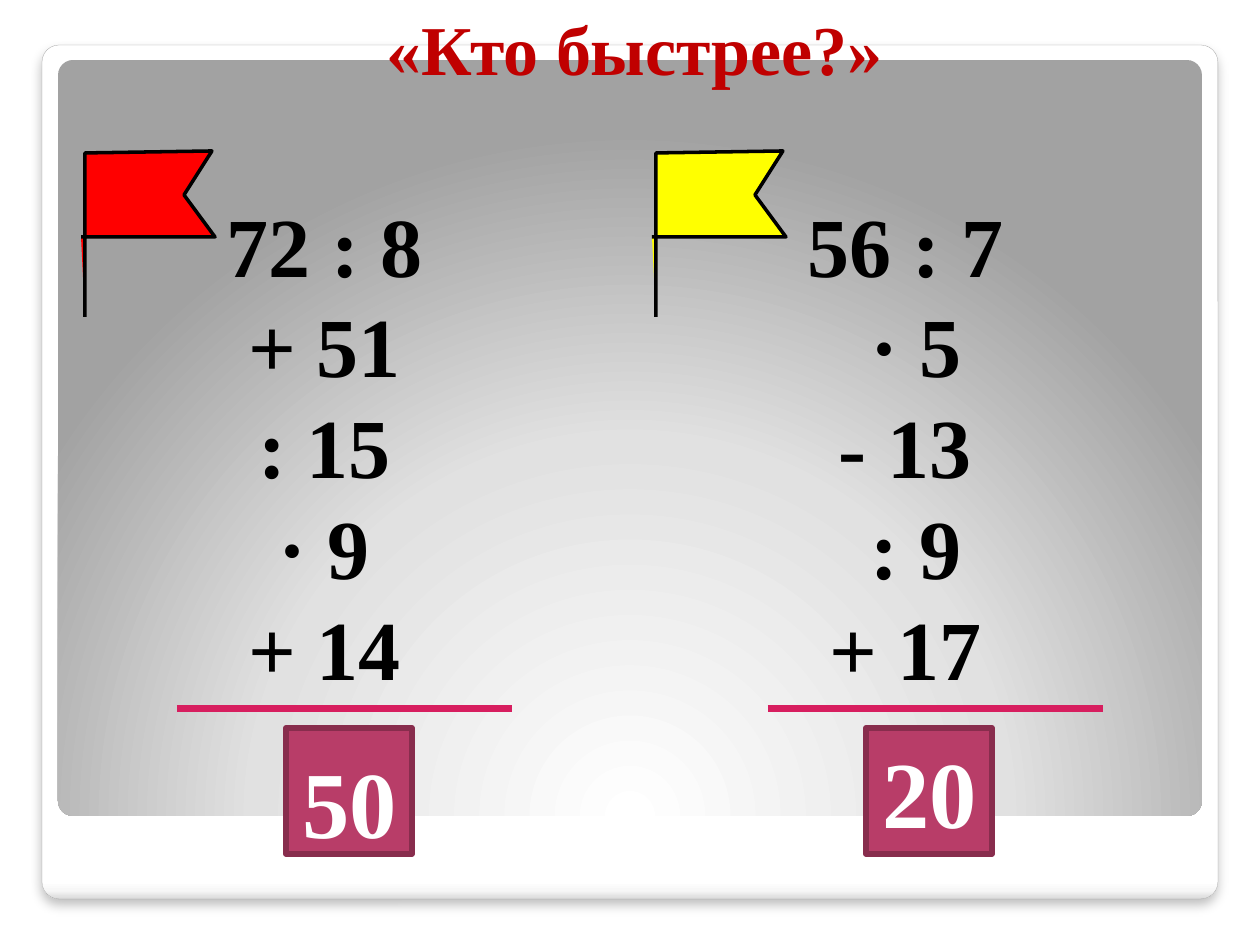
"""Builds the mental arithmetic race slide with two columns of sums."""
from pptx import Presentation
from pptx.dml.color import RGBColor
from pptx.enum.shapes import MSO_CONNECTOR as Connector, MSO_SHAPE as Shape
from pptx.enum.text import MSO_ANCHOR as Anchor, MSO_AUTO_SIZE as AutoSize, PP_ALIGN as Align
from pptx.oxml import parse_xml
from pptx.oxml.ns import nsdecls, qn
from pptx.util import Emu, Pt

PX = 914400 // 126
SLIDE_SIZE = (1260, 945)
BLACK = RGBColor(0x00, 0x00, 0x00)
WHITE = RGBColor(0xFF, 0xFF, 0xFF)
RED = RGBColor(0xFF, 0x00, 0x00)
YELLOW = RGBColor(0xFF, 0xFF, 0x00)
DARK_RED = RGBColor(0xC0, 0x00, 0x00)
PINK = RGBColor(0xD7, 0x1E, 0x5F)
PLUM = RGBColor(0xB8, 0x3D, 0x68)
DARK_PLUM = RGBColor(0x88, 0x2D, 0x4D)
GREY = RGBColor(0xA4, 0xA4, 0xA4)

TITLE = "«Кто быстрее?»"
COLUMNS = [
    {"steps": ["72 : 8", "+ 51", ": 15", "· 9", "+ 14"], "answer": "50", "flag": RED,
     "flag_x": 81, "steps_x": 118, "rule_x": 177, "answer_x": 286, "answer_y": 738},
    {"steps": ["56 : 7", " · 5", "- 13", " : 9", "+ 17"], "answer": "20", "flag": YELLOW,
     "flag_x": 652, "steps_x": 699, "rule_x": 768, "answer_x": 866, "answer_y": 728},
]
FLAG_TOP = 151
FLAG_POINTS = [(0, 86), (21, 86), (134, 86), (103, 44), (131, 0), (4, 2), (4, 166)]
RULE_Y, RULE_WIDTH = 709, 335
TILE_Y, TILE_SIZE = 728, 126

CARD = {
    "box": (42, 45, 1176, 854),
    "stops": [(0, WHITE), (98, WHITE), (99, RGBColor(0xF7, 0xF7, 0xF7)),
              (100, RGBColor(0xDA, 0xDA, 0xDA))],
    "direction": '<a:lin ang="5400000" scaled="0"/>',
}
BACKDROP = {
    "box": (58, 60, 1144, 756),
    "stops": [(0, WHITE), (55, RGBColor(0xE1, 0xE1, 0xE1)), (100, RGBColor(0xA2, 0xA2, 0xA2))],
    "direction": '<a:path path="circle"><a:fillToRect l="50000" t="175000" '
                 'r="50000" b="-75000"/></a:path>',
}
CARD_SHADOW = (
    f'<a:outerShdw {nsdecls("a")} blurRad="76200" dist="50800" dir="5400000" rotWithShape="0">'
    '<a:srgbClr val="000000"><a:alpha val="25000"/></a:srgbClr></a:outerShdw>'
)


def px(*values):
    return [Emu(value * PX) for value in values]


def style_shape(shape, fill, line, width):
    shape.shadow.inherit = False
    shape.fill.solid()
    shape.fill.fore_color.rgb = fill
    shape.line.color.rgb = line
    shape.line.width = Pt(width)


def add_panel(slide, box, stops, direction):
    panel = slide.shapes.add_shape(Shape.ROUNDED_RECTANGLE, *px(*box))
    panel.adjustments[0] = 0.02
    panel.shadow.inherit = False
    panel.line.fill.background()
    panel.fill.background()
    stop_list = "".join(
        f'<a:gs pos="{position * 1000}"><a:srgbClr val="{color}"/></a:gs>'
        for position, color in stops)
    gradient = parse_xml(f'<a:gradFill {nsdecls("a")} rotWithShape="1">'
                         f'<a:gsLst>{stop_list}</a:gsLst>{direction}</a:gradFill>')
    properties = panel._element.spPr
    properties.replace(properties.find(qn("a:noFill")), gradient)
    return panel


def write_text(shape, lines, size, color):
    frame = shape.text_frame
    frame_format = {"word_wrap": True, "auto_size": AutoSize.NONE,
                    "vertical_anchor": Anchor.TOP, "margin_top": Emu(6 * PX)}
    for name, value in frame_format.items():
        setattr(frame, name, value)
    font_format = {"name": "Times New Roman", "size": Pt(size), "bold": True}
    frame.text = "\n".join(lines)
    for paragraph in frame.paragraphs:
        paragraph.alignment = Align.CENTER
        font = paragraph.runs[0].font
        for name, value in font_format.items():
            setattr(font, name, value)
        font.color.rgb = color


def add_text(slide, box, *text_format):
    write_text(slide.shapes.add_textbox(*px(*box)), *text_format)


def add_flag(slide, left, color):
    points = [(left + x, FLAG_TOP + y) for x, y in FLAG_POINTS]
    builder = slide.shapes.build_freeform(*points[0], scale=PX)
    builder.add_line_segments(points[1:], close=False)
    style_shape(builder.convert_to_shape(), color, BLACK, 2)


def add_rule(slide, left):
    rule = slide.shapes.add_connector(
        Connector.STRAIGHT, *px(left, RULE_Y, left + RULE_WIDTH, RULE_Y))
    rule.line.color.rgb = PINK
    rule.line.width = Pt(4)
    rule._element.spPr.append(parse_xml(f'<a:effectLst {nsdecls("a")}/>'))


def add_column(slide, column):
    add_text(slide, (column["steps_x"], 187, 413, 598), column["steps"], 48, BLACK)
    add_rule(slide, column["rule_x"])
    tile = slide.shapes.add_shape(
        Shape.RECTANGLE, *px(column["answer_x"], TILE_Y, TILE_SIZE, TILE_SIZE))
    style_shape(tile, PLUM, DARK_PLUM, 3.35)
    add_text(slide, (column["answer_x"], column["answer_y"], 128, 127),
             [column["answer"]], 54, WHITE)
    add_flag(slide, column["flag_x"], column["flag"])


def main():
    presentation = Presentation()
    presentation.slide_width, presentation.slide_height = px(*SLIDE_SIZE)
    slide = presentation.slides.add_slide(presentation.slide_layouts[5])

    card = add_panel(slide, **CARD)
    card.line.color.rgb = GREY
    card.line.width = Pt(0.16)
    card._element.spPr.find(qn("a:effectLst")).append(parse_xml(CARD_SHADOW))
    add_panel(slide, **BACKDROP)

    title = slide.shapes.title
    title.left, title.top, title.width, title.height = px(108, 0, 1053, 97)
    write_text(title, [TITLE], 40, DARK_RED)
    slide.shapes._spTree.append(title._element)

    for column in COLUMNS:
        add_column(slide, column)
    presentation.save("out.pptx")


if __name__ == "__main__":
    main()
